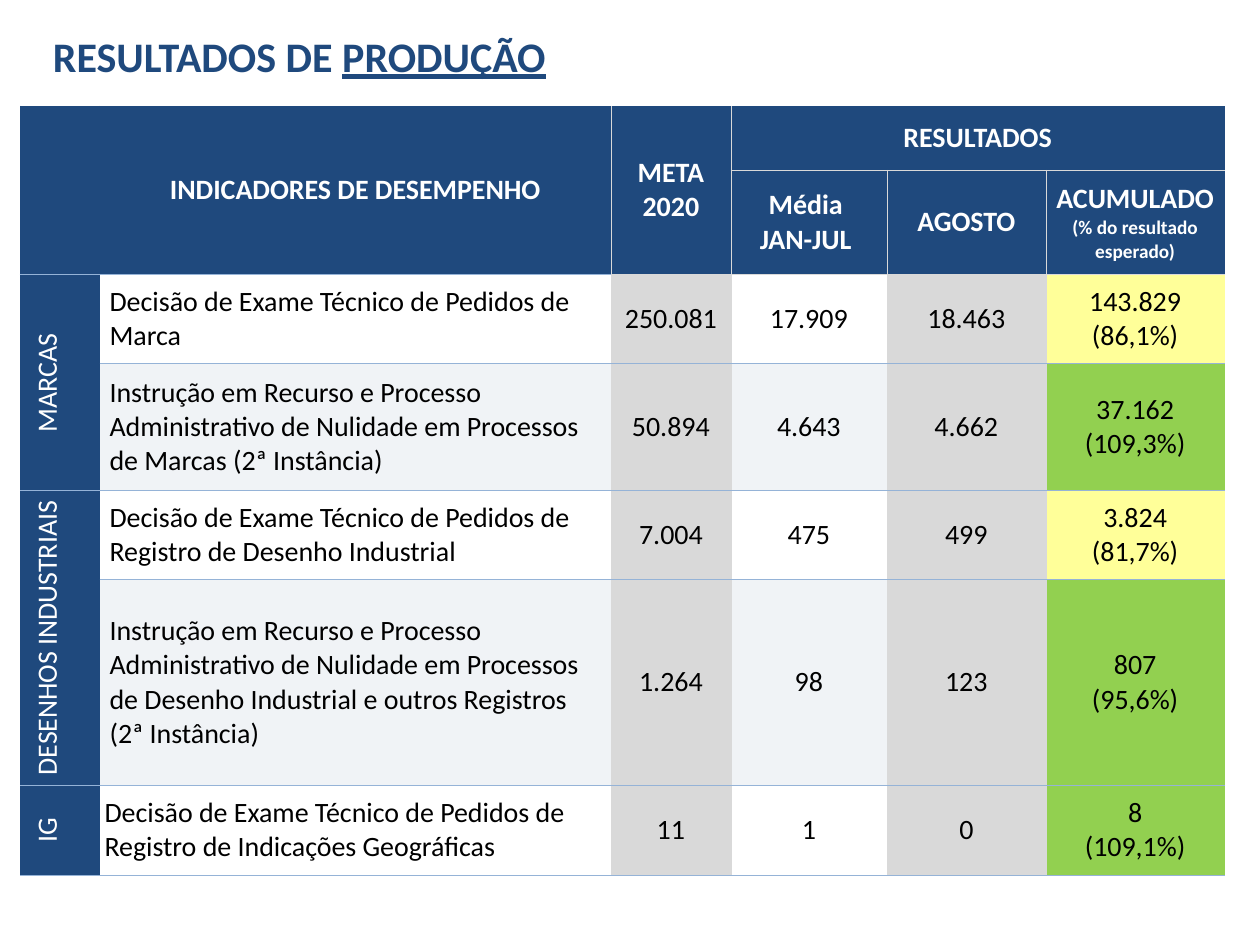
from lxml import etree
from pptx import Presentation
from pptx.dml.color import RGBColor
from pptx.enum.text import MSO_ANCHOR, PP_ALIGN
from pptx.oxml.ns import qn
from pptx.util import Inches, Pt

NAVY, BLUE, GREY, PALE = "1F497D", "95B3D7", "D9D9D9", "F0F3F6"
WHITE, BLACK, YELLOW, GREEN = "FFFFFF", "000000", "FFFF99", "92D050"
NO_STYLE = "{2D5ABB26-0587-4C30-8999-92F81FD0307C}"

TITLE = [("RESULTADOS DE ", False), ("PRODUÇÃO", True)]
COLUMN_WIDTHS = [0.63, 4.06, 0.95, 1.24, 1.26, 1.42]
ROW_HEIGHTS = [0.51, 0.83, 0.63, 1.01, 0.65, 1.29, 0.71]

# (row, column, row span, column span, paragraphs)
HEADERS = [
    (0, 0, 2, 1, []),
    (0, 1, 2, 1, ["INDICADORES DE DESEMPENHO"]),
    (0, 2, 2, 1, ["META", "2020"]),
    (0, 3, 1, 3, ["RESULTADOS"]),
    (1, 3, 1, 1, ["Média ", "JAN-JUL "]),
    (1, 4, 1, 1, ["AGOSTO"]),
    (1, 5, 1, 1, ["ACUMULADO", "(% do resultado esperado)"]),
]
# area: (indicator, target, monthly mean, August, total, share, status colour)
AREAS = {
    "MARCAS": [
        ("Decisão de Exame Técnico de Pedidos de Marca",
         "250.081", "17.909", "18.463", "143.829", "(86,1%)", YELLOW),
        ("Instrução em Recurso e Processo Administrativo de Nulidade em "
         "Processos de Marcas (2ª Instância)",
         "50.894", "4.643", "4.662", "37.162", "(109,3%)", GREEN),
    ],
    "DESENHOS INDUSTRIAIS": [
        ("Decisão de Exame Técnico de Pedidos de Registro de Desenho Industrial",
         "7.004", "475", "499", "3.824", "(81,7%)", YELLOW),
        ("Instrução em Recurso e Processo Administrativo de Nulidade em "
         "Processos de Desenho Industrial e outros Registros (2ª Instância)",
         "1.264", "98", "123", "807", "(95,6%)", GREEN),
    ],
    "IG": [
        ("Decisão de Exame Técnico de Pedidos de Registro de Indicações Geográficas",
         "11", "1", "0", "8", "(109,1%)", GREEN),
    ],
}


def rgb(value):
    return RGBColor.from_string(value)


def set_font(font, size, color, **attributes):
    font.color.rgb = rgb(color)
    for name, value in dict(name="Calibri", size=Pt(size), **attributes).items():
        setattr(font, name, value)


def set_borders(cell, **sides):
    """Draw the given sides (L, R, T, B), each a (colour, points) pair."""
    properties = cell._tc.get_or_add_tcPr()
    for side in "LRTB":
        if side in sides:
            color, points = sides[side]
            line = etree.SubElement(properties, qn(f"a:ln{side}"), w=str(Pt(points)))
            solid = etree.SubElement(line, qn("a:solidFill"))
            etree.SubElement(solid, qn("a:srgbClr"), val=color)


def fill_cell(cell, paragraphs, fill, color, borders, bold=False,
              align=PP_ALIGN.CENTER, inset=(0.08, 0.08)):
    set_borders(cell, **borders)
    cell.fill.solid()
    cell.fill.fore_color.rgb = rgb(fill)
    cell.vertical_anchor = MSO_ANCHOR.MIDDLE
    cell.margin_left = cell.margin_right = Inches(inset[0])
    cell.margin_top = cell.margin_bottom = Inches(inset[1])
    cell.text = "\n".join(paragraphs)
    for paragraph in cell.text_frame.paragraphs:
        paragraph.alignment = align
        for run in paragraph.runs:
            size = 11 if run.text.startswith("(%") else 16
            set_font(run.font, size, color, bold=bold)


def add_title(slide):
    title = slide.shapes.title
    title.left, title.top, title.width, title.height = map(
        Inches, (0.33, 0.2, 9.49, 0.49))
    frame = title.text_frame
    frame.vertical_anchor = MSO_ANCHOR.TOP
    frame.margin_left = frame.margin_right = Inches(0.09)
    frame.margin_top = frame.margin_bottom = Inches(0.04)
    paragraph = frame.paragraphs[0]
    paragraph.alignment = PP_ALIGN.LEFT
    for text, underline in TITLE:
        run = paragraph.add_run()
        run.text = text
        set_font(run.font, 24, NAVY, bold=True, underline=underline)


def add_results(slide):
    table = slide.shapes.add_table(
        len(ROW_HEIGHTS), len(COLUMN_WIDTHS), Inches(0.16), Inches(0.84),
        Inches(sum(COLUMN_WIDTHS)), Inches(sum(ROW_HEIGHTS))).table
    table.first_row = table.horz_banding = False
    table._tbl.tblPr.find(qn("a:tableStyleId")).text = NO_STYLE
    for column, width in zip(table.columns, COLUMN_WIDTHS):
        column.width = Inches(width)
    for row, height in zip(table.rows, ROW_HEIGHTS):
        row.height = Inches(height)

    thin, rule, hidden = (GREY, 0.25), (BLUE, 0.5), (NAVY, 0.5)
    for row, column, height, width, paragraphs in HEADERS:
        cell = table.cell(row, column)
        if height * width > 1:
            cell.merge(table.cell(row + height - 1, column + width - 1))
        borders = {"B": rule if column < 2 else thin}
        if row:
            borders["T"] = thin
        borders["L"] = hidden if column < 2 else thin
        if column + width < len(COLUMN_WIDTHS):
            borders["R"] = hidden if column == 0 else thin
        inset = (0.08, 0.04) if row else (0.1, 0.05)
        fill_cell(cell, paragraphs, NAVY, WHITE, borders, bold=True, inset=inset)

    row = 2
    for area, indicators in AREAS.items():
        area_cell = table.cell(row, 0)
        if len(indicators) > 1:
            area_cell.merge(table.cell(row + len(indicators) - 1, 0))
        fill_cell(area_cell, [area], NAVY, WHITE, {"T": rule, "B": rule})
        area_cell._tc.get_or_add_tcPr().set("vert", "vert270")
        for index, (indicator, *values, total, share, status) in enumerate(indicators):
            band = PALE if index % 2 else WHITE
            indicator_inset = 0.04 if area == "IG" else 0.08
            fill_cell(table.cell(row, 1), [indicator], band, BLACK,
                      {"R": thin, "T": rule, "B": rule},
                      align=PP_ALIGN.LEFT, inset=(indicator_inset, 0.08))
            figures = [[value] for value in values] + [[total, share]]
            fills = [GREY, band, GREY, status]
            for column, (figure, fill) in enumerate(zip(figures, fills), 2):
                borders = {"L": thin, "T": thin if row == 2 else rule, "B": rule}
                if column < 5:
                    borders["R"] = thin
                fill_cell(table.cell(row, column), figure, fill, BLACK, borders,
                          inset=(0.04, 0.08))
            row += 1


def main():
    presentation = Presentation()
    presentation.slide_width, presentation.slide_height = Inches(10), Inches(7.5)
    slide = presentation.slides.add_slide(presentation.slide_layouts[5])
    add_title(slide)
    add_results(slide)
    presentation.save("out.pptx")


if __name__ == "__main__":
    main()
